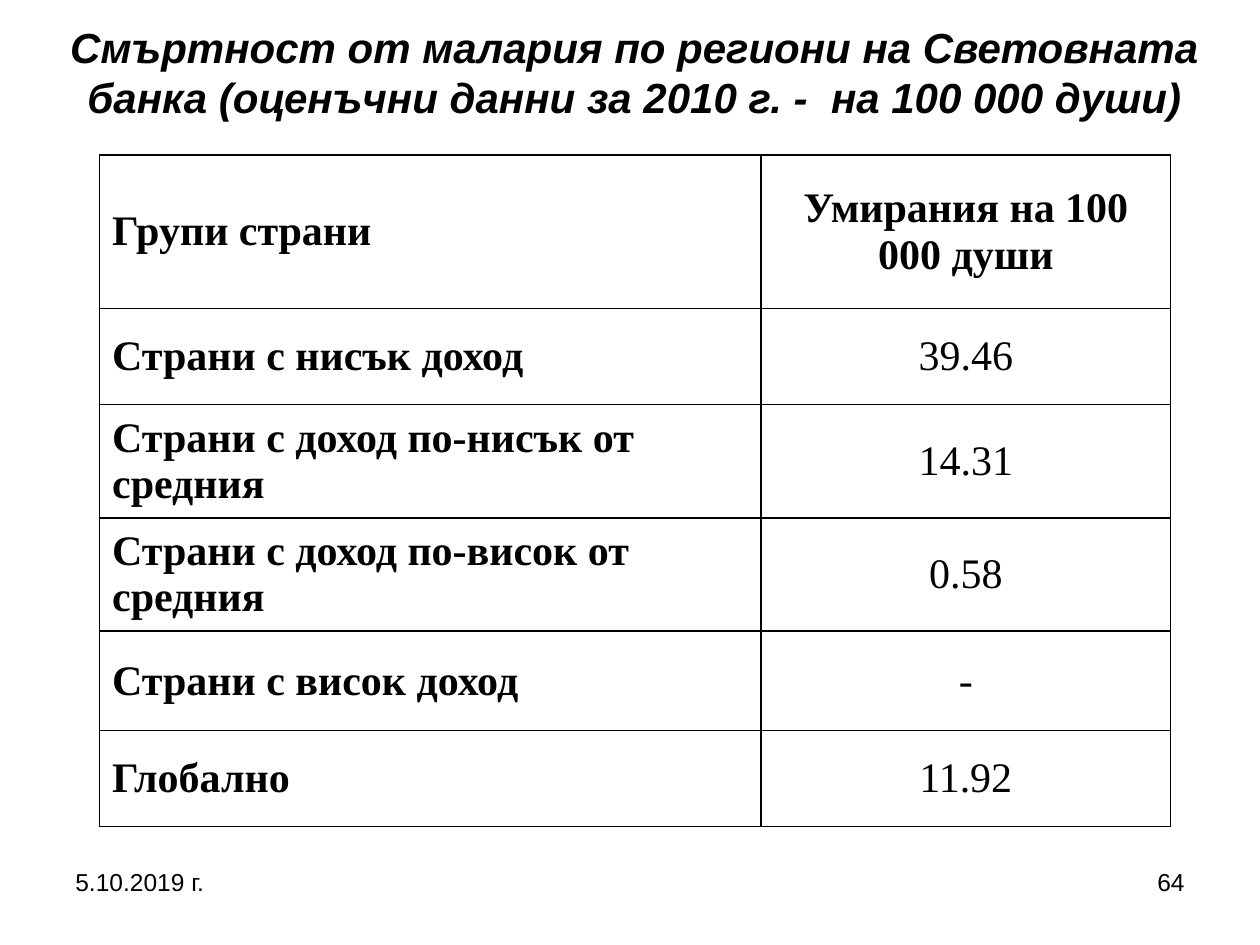
from dataclasses import dataclass

from lxml import etree
from pptx import Presentation
from pptx.dml.color import RGBColor
from pptx.enum.text import MSO_ANCHOR, PP_ALIGN
from pptx.oxml.ns import qn
from pptx.util import Inches, Pt

LEFT, CENTER, RIGHT = PP_ALIGN.LEFT, PP_ALIGN.CENTER, PP_ALIGN.RIGHT
MIDDLE = MSO_ANCHOR.MIDDLE
TITLE_ONLY = 5


@dataclass(frozen=True)
class Theme:
    ink: RGBColor = RGBColor(0, 0, 0)
    heading_font: str = "Arial"
    table_font: str = "Times New Roman"
    heading_size: int = 24
    footer_size: int = 14
    border_width: int = 1


THEME = Theme()

TITLE = ("Смъртност от малария по региони на Световната банка "
         "(оценъчни данни за 2010 г. -  на 100 000 души)")
MORTALITY_ROWS = [
    ("Групи страни", "Умирания на 100 000 души", 1.22),
    ("Страни с нисък доход", "39.46", 0.76),
    ("Страни с доход по-нисък от средния", "14.31", 0.9),
    ("Страни с доход по-висок от средния", "0.58", 0.9),
    ("Страни с висок доход", "-", 0.79),
    ("Глобално", "11.92", 0.76),
]
COLUMN_WIDTHS = (5.25, 3.25)


def write_text(text_frame, text, font, size, align=LEFT, bold=False, italic=False):
    text_frame.text = text
    text_frame.word_wrap = True
    paragraph = text_frame.paragraphs[0]
    paragraph.alignment = align
    for run in paragraph.runs:
        run.font.name = font
        run.font.size = Pt(size)
        run.font.bold = bold
        run.font.italic = italic
        run.font.color.rgb = THEME.ink


def set_borders(cell):
    properties = cell._tc.get_or_add_tcPr()
    for index, side in enumerate(("lnL", "lnR", "lnT", "lnB")):
        line = etree.Element(qn(f"a:{side}"), w=str(Pt(THEME.border_width)))
        fill = etree.SubElement(line, qn("a:solidFill"))
        etree.SubElement(fill, qn("a:srgbClr"), val=str(THEME.ink))
        properties.insert(index, line)


def place_title(slide, left, top, width, height):
    title = slide.shapes.title
    title.left, title.top = Inches(left), Inches(top)
    title.width, title.height = Inches(width), Inches(height)
    title.text_frame.vertical_anchor = MIDDLE
    write_text(title.text_frame, TITLE, THEME.heading_font, THEME.heading_size,
               CENTER, bold=True, italic=True)


def add_mortality_table(slide, left, top):
    width = sum(COLUMN_WIDTHS)
    height = sum(row[-1] for row in MORTALITY_ROWS)
    table = slide.shapes.add_table(
        len(MORTALITY_ROWS), len(COLUMN_WIDTHS),
        Inches(left), Inches(top), Inches(width), Inches(height)).table
    for column, column_width in zip(table.columns, COLUMN_WIDTHS):
        column.width = Inches(column_width)
    for row_index, (group, deaths, row_height) in enumerate(MORTALITY_ROWS):
        table.rows[row_index].height = Inches(row_height)
        for column_index, text in enumerate((group, deaths)):
            cell = table.cell(row_index, column_index)
            cell.fill.background()
            cell.vertical_anchor = MIDDLE
            is_heading = row_index == 0 or column_index == 0
            write_text(cell.text_frame, text, THEME.table_font, THEME.heading_size,
                       CENTER if column_index else LEFT, bold=is_heading)
            set_borders(cell)


def add_footer(slide, left, top, width, height):
    box_width = 2.33
    parts = [("5.10.2019 г.", left, LEFT),
             ("64", left + width - box_width, RIGHT)]
    for text, box_left, align in parts:
        box = slide.shapes.add_textbox(
            Inches(box_left), Inches(top), Inches(box_width), Inches(height))
        write_text(box.text_frame, text, THEME.heading_font, THEME.footer_size, align)


def main():
    presentation = Presentation()
    presentation.slide_width, presentation.slide_height = Inches(10), Inches(7.5)
    slide = presentation.slides.add_slide(presentation.slide_layouts[TITLE_ONLY])
    place_title(slide, 0.43, 0.12, 9.21, 0.9)
    add_mortality_table(slide, 0.79, 1.23)
    add_footer(slide, 0.5, 6.83, 9, 0.52)
    presentation.save("out.pptx")


if __name__ == "__main__":
    main()
